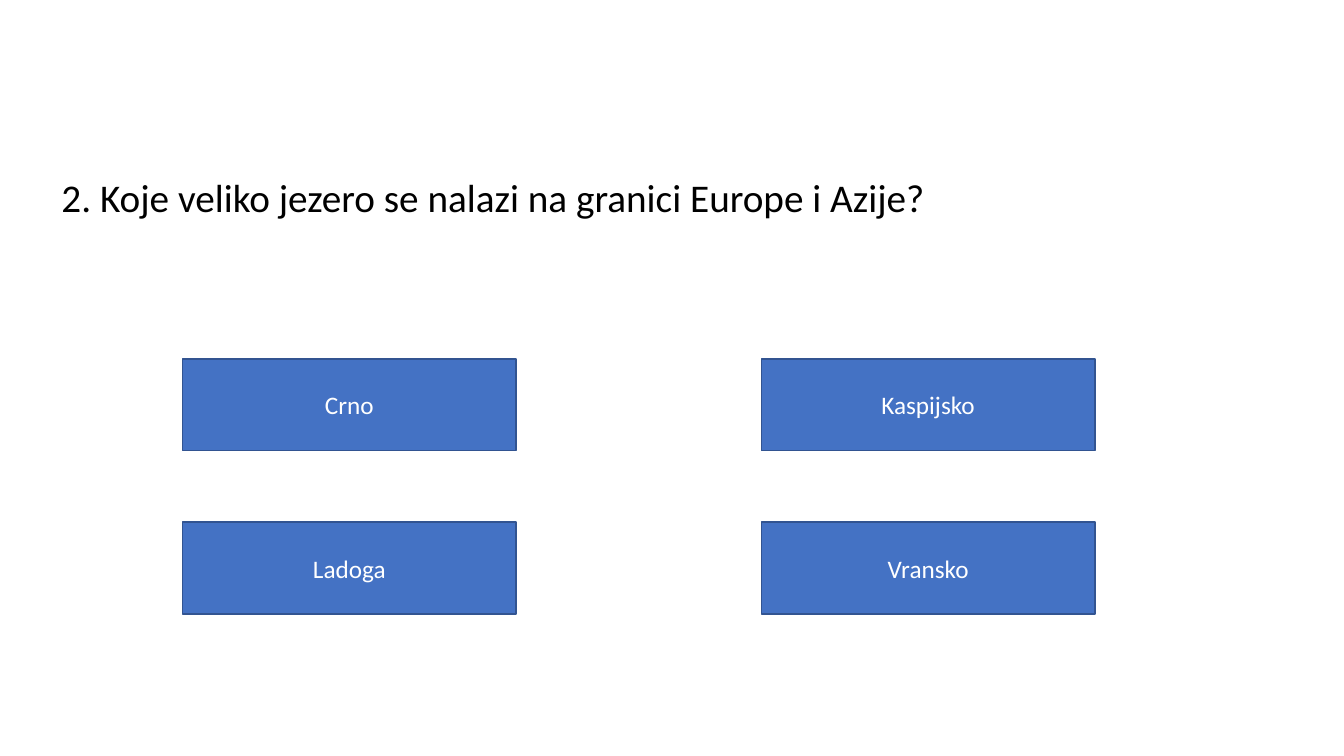
from pptx import Presentation
from pptx.dml.color import RGBColor
from pptx.enum.shapes import MSO_SHAPE
from pptx.enum.text import MSO_ANCHOR, MSO_AUTO_SIZE, PP_ALIGN
from pptx.util import Inches, Pt

BLACK = RGBColor(0x00, 0x00, 0x00)
WHITE = RGBColor(0xFF, 0xFF, 0xFF)
BLUE = RGBColor(0x44, 0x72, 0xC4)
DARK_BLUE = RGBColor(0x32, 0x54, 0x91)

QUESTION = "2. Koje veliko jezero se nalazi na granici Europe i Azije?"
ANSWERS = [["Crno", "Kaspijsko"], ["Ladoga", "Vransko"]]
ANSWER_WIDTH, ANSWER_HEIGHT = 3.31, 0.91


def write_text(shape, text, alignment, anchor, font_format):
    frame = shape.text_frame
    frame.word_wrap = True
    frame.vertical_anchor = anchor
    paragraph = frame.paragraphs[0]
    paragraph.alignment = alignment
    run = paragraph.add_run()
    run.text = text
    color = font_format["color"]
    for name, value in font_format.items():
        if name != "color":
            setattr(run.font, name, value)
    run.font.color.rgb = color


def add_question(slide, left, top, width, height):
    title = slide.shapes.title
    box = {"left": left, "top": top, "width": width, "height": height}
    for name, value in box.items():
        setattr(title, name, Inches(value))
    write_text(title, QUESTION, PP_ALIGN.LEFT, MSO_ANCHOR.TOP,
               {"name": "Calibri", "size": Pt(28), "color": BLACK})
    title.text_frame.auto_size = MSO_AUTO_SIZE.SHAPE_TO_FIT_TEXT


def add_answer(slide, text, left, top):
    shape = slide.shapes.add_shape(
        MSO_SHAPE.RECTANGLE, Inches(left), Inches(top),
        Inches(ANSWER_WIDTH), Inches(ANSWER_HEIGHT))
    shape.shadow.inherit = False
    shape.fill.solid()
    shape.fill.fore_color.rgb = BLUE
    shape.line.color.rgb = DARK_BLUE
    shape.line.width = Pt(1)
    write_text(shape, text, PP_ALIGN.CENTER, MSO_ANCHOR.MIDDLE,
               {"name": "Calibri", "size": Pt(18), "color": WHITE})


def add_answer_grid(slide, left, top, width, height):
    """Spread the answers so that the outer ones touch the edges of the box."""
    column_step = (width - ANSWER_WIDTH) / (len(ANSWERS[0]) - 1)
    row_step = (height - ANSWER_HEIGHT) / (len(ANSWERS) - 1)
    for row, answers in enumerate(ANSWERS):
        for column, answer in enumerate(answers):
            add_answer(slide, answer, left + column * column_step, top + row * row_step)


def main():
    presentation = Presentation()
    presentation.slide_width = Inches(13.33)
    presentation.slide_height = Inches(7.5)
    slide = presentation.slides.add_slide(presentation.slide_layouts[5])
    add_question(slide, 0.51, 1.67, 12.46, 0.57)
    add_answer_grid(slide, 1.81, 3.56, 9.05, 2.53)
    presentation.save("out.pptx")


if __name__ == "__main__":
    main()
